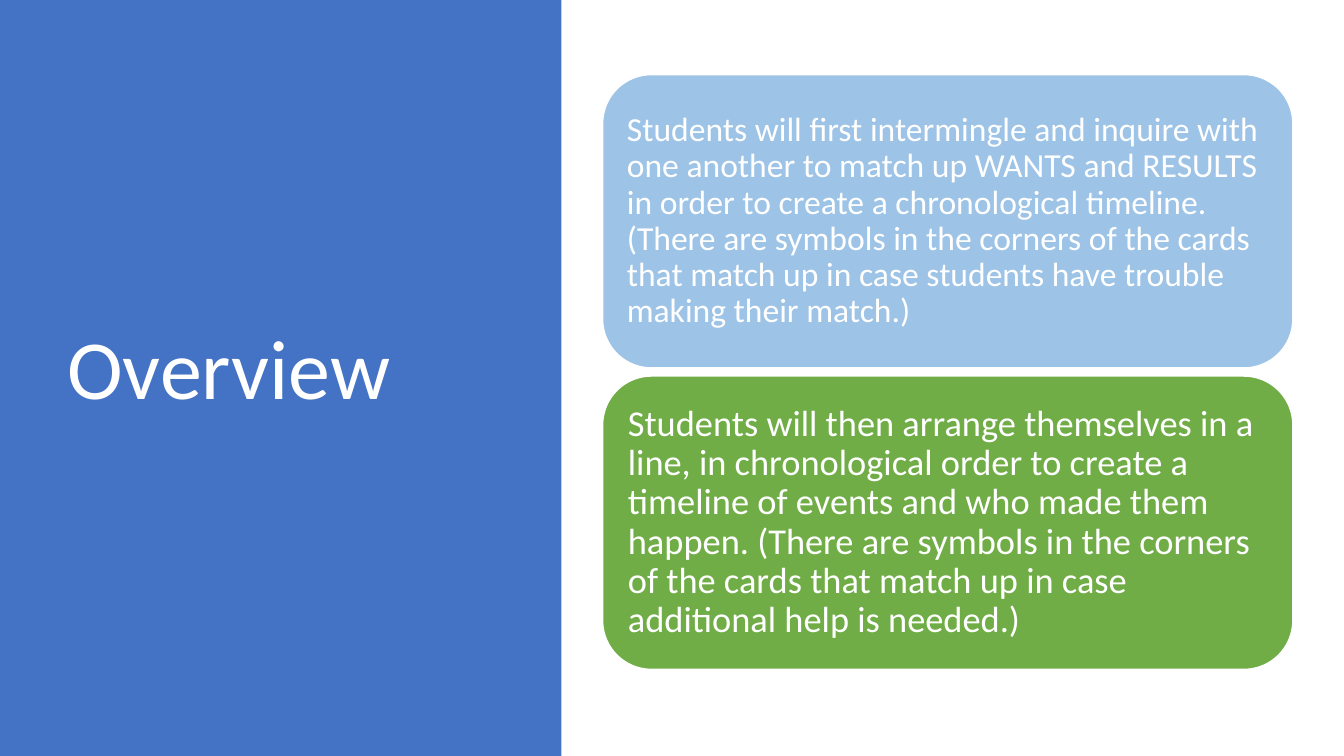
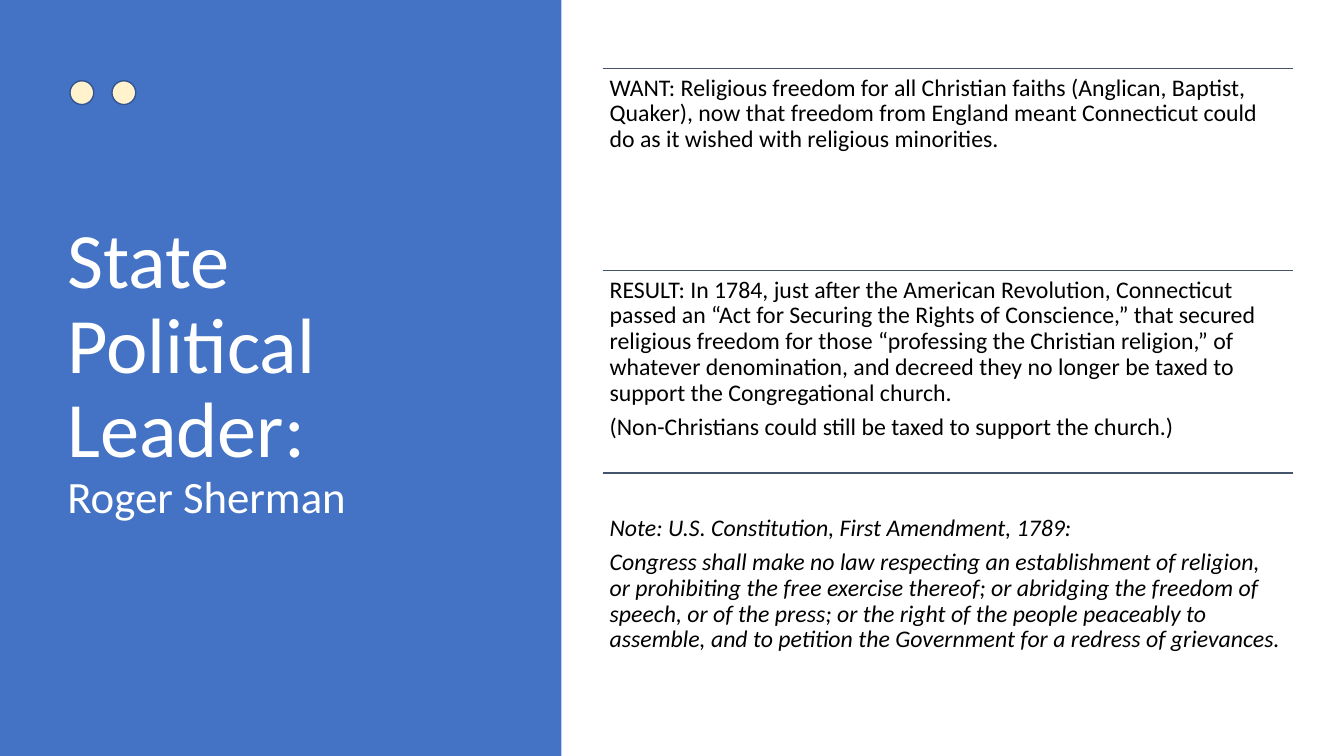
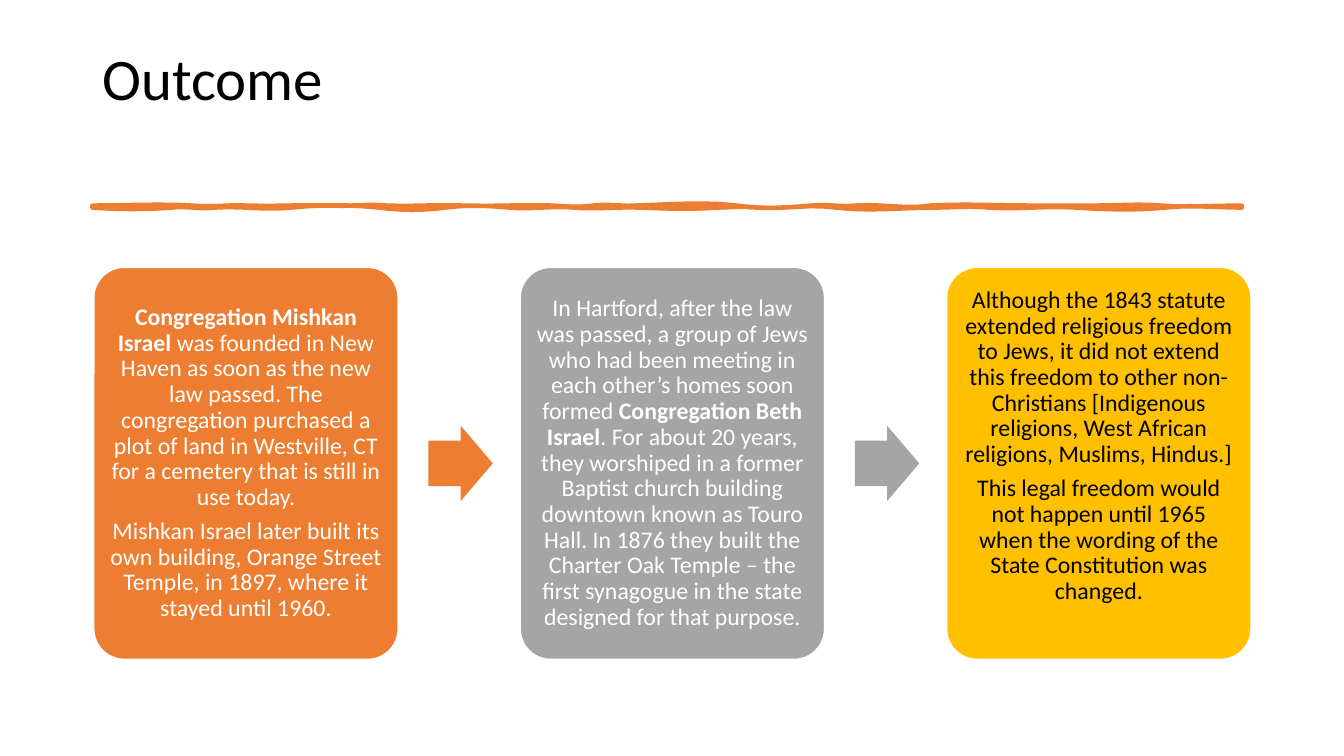
from lxml import etree
from pptx import Presentation
from pptx.dml.color import RGBColor
from pptx.enum.shapes import MSO_CONNECTOR, MSO_SHAPE
from pptx.enum.text import MSO_ANCHOR, PP_ALIGN
from pptx.oxml.ns import qn
from pptx.util import Pt

RECT, ROUND = MSO_SHAPE.RECTANGLE, MSO_SHAPE.ROUNDED_RECTANGLE
OVAL, ARROW = MSO_SHAPE.OVAL, MSO_SHAPE.RIGHT_ARROW
STRAIGHT = MSO_CONNECTOR.STRAIGHT
TOP, MIDDLE = MSO_ANCHOR.TOP, MSO_ANCHOR.MIDDLE
LEFT, CENTER = PP_ALIGN.LEFT, PP_ALIGN.CENTER

FONT = "Calibri"
WHITE, BLACK, BLUE, ORANGE = "FFFFFF", "000000", "4472C4", "ED7D31"
GRAY, GOLD, SLATE = "A5A5A5", "FFC000", "44546A"
rgb = RGBColor.from_string

# Shared layout, in points
PANEL_W = 401
COL_X, COL_W = 430.5, 493


def add_box(s, kind, x, y, w, h, fill, line=None):
    sp = s.shapes.add_shape(kind, Pt(x), Pt(y), Pt(w), Pt(h))
    sp.shadow.inherit = False
    sp.fill.solid()
    sp.fill.fore_color.rgb = rgb(fill)
    if line:
        sp.line.color.rgb = rgb(line)
        sp.line.width = Pt(1)
    else:
        sp.line.fill.background()
    return sp


def write(sp, paras, size, color, inset=(7.2, 3.6, 7.2, 3.6), anchor=MIDDLE,
          align=LEFT, italic=False):
    """Fill a shape with paragraphs; ** switches bold on and off."""
    tf = sp.text_frame
    tf.word_wrap = True
    tf.vertical_anchor = anchor
    tf.margin_left, tf.margin_top, tf.margin_right, tf.margin_bottom = map(Pt, inset)
    for i, text in enumerate(paras):
        p = tf.add_paragraph() if i else tf.paragraphs[0]
        p.alignment = align
        p.line_spacing = 0.9
        p.space_after = Pt(round(0.35 * size, 1))
        parts = text.split("**")
        p.text = parts[0]
        for n, part in enumerate(parts[1:]):
            r = p.add_run()
            r.text = part
            r.font.bold = n % 2 == 0
        for r in p.runs:
            r.font.name = FONT
            r.font.size = Pt(size)
            r.font.color.rgb = rgb(color)
            r.font.italic = italic


prs = Presentation()
prs.slide_width, prs.slide_height = Pt(960), Pt(540)
overview, leader, outcome = [prs.slides.add_slide(prs.slide_layouts[6]) for _ in range(3)]

# Blue title panel on the first two slides
panel_titles = []
for s, title, size in [(overview, "Overview", 60),
                       (leader, "State Political Leader:\vRoger Sherman", 56)]:
    add_box(s, RECT, 0, 0, PANEL_W, 540, BLUE)
    sp = s.shapes.add_textbox(Pt(41), Pt(49), Pt(299.5), Pt(433.5))
    write(sp, [title], size, WHITE)
    panel_titles.append(sp)
panel_titles[1].text_frame.paragraphs[0].runs[1].font.size = Pt(32)

# Overview: two stacked cards
steps = [
    ("9DC3E6", 24, 7.2,
     "Students will first intermingle and inquire with one another to match up WANTS and "
     "RESULTS in order to create a chronological timeline. (There are symbols in the corners "
     "of the cards that match up in case students have trouble making their match.)"),
    ("70AD47", 26, 7.8,
     "Students will then arrange themselves in a line, in chronological order to create a "
     "timeline of events and who made them happen. (There are symbols in the corners of the "
     "cards that match up in case additional help is needed.)"),
]
for i, (fill, size, pad, text) in enumerate(steps):
    sp = add_box(overview, ROUND, COL_X, 53.3 + i * 215.3, COL_W, 209.5, fill, WHITE)
    write(sp, [text], size, WHITE, inset=[pad] * 4)

# Leader: ruled sections with text below each rule
sections = [
    (5, False, [
        "WANT: Religious freedom for all Christian faiths (Anglican, Baptist, Quaker), now that "
        "freedom from England meant Connecticut could do as it wished with religious minorities."]),
    (5, False, [
        "RESULT: In 1784, just after the American Revolution, Connecticut passed an “Act for "
        "Securing the Rights of Conscience,” that secured religious freedom for those "
        "“professing the Christian religion,” of whatever denomination, and decreed they no "
        "longer be taxed to support the Congregational church.",
        "(Non-Christians could still be taxed to support the church.)"]),
    (31, True, [
        "Note: U.S. Constitution, First Amendment, 1789:",
        "Congress shall make no law respecting an establishment of religion, or prohibiting the "
        "free exercise thereof; or abridging the freedom of speech, or of the press; or the "
        "right of the people peaceably to assemble, and to petition the Government for a "
        "redress of grievances."]),
]
for i, (top, italic, paras) in enumerate(sections):
    y = 49 + i * 144.4
    rule = leader.shapes.add_connector(STRAIGHT, Pt(COL_X), Pt(y), Pt(COL_X + COL_W), Pt(y))
    rule.line.color.rgb = rgb(SLATE)
    rule.line.width = Pt(1)
    etree.SubElement(rule._element.spPr, qn("a:effectLst"))
    sp = leader.shapes.add_textbox(Pt(COL_X), Pt(y), Pt(COL_W), Pt(144.4))
    write(sp, paras, 17, BLACK, inset=(5, top, 5, 5), anchor=TOP, italic=italic)

# Leader: matching symbol of two dots
for i in range(2):
    add_box(leader, OVAL, 50 + i * 30, 57.7, 17, 17, "FFF2CC", "325491")

# Outcome: title
sp = outcome.shapes.add_textbox(Pt(66), Pt(29), Pt(828), Pt(58))
write(sp, ["Outcome"], 42, BLACK)

# Outcome: hand-drawn rule; each stretch is (end x, first bend, second bend)
upper = [(137, 0, -1.4), (176, 1.4, -0.7), (238, 0.7, -0.7), (276, 0.7, -1.4),
         (331, 0.7, -0.7), (395, 0.7, -0.7), (424, 0.7, 1.4), (454, -1.4, 0.7),
         (526, -0.7, -2.9), (580, 2.9, 1.4), (611, -1.4, 1.4), (665, -1.4, 2.9),
         (737, -1.4, 0), (783, 0, 0), (829, 0, -1.4), (887, 1.4, 0)]
lower = [(832, 0, -2.1), (769, 2.1, 1.4), (706, -1.4, 1.4), (668, -1.4, 0),
         (597, 0, 2.9), (542, -2.9, 1.4), (512, -1.4, 0), (457, 1.4, 0.7),
         (410, -0.7, 1.4), (364, -1.4, 1.4), (318, -1.4, -2.1), (271, 2.1, 2.1),
         (208, -2.1, -2.1), (153, 2.1, -1.4), (123, 1.4, -1.4), (66, 1.4, 1.4)]
points = []
x = 66
for edge_y, stretches in [(146.9, upper), (148.3, lower)]:
    points.append((Pt(x), Pt(edge_y)))
    for end, b1, b2 in stretches:
        for k in range(1, 7):
            t = k / 6
            bend = 3 * t * (1 - t) * ((1 - t) * b1 + t * b2)
            points.append((Pt(x + t * (end - x)), Pt(edge_y + bend)))
        x = end
fb = outcome.shapes.build_freeform(*points[0])
fb.add_line_segments(points[1:], close=True)
sp = fb.convert_to_shape()
sp.shadow.inherit = False
sp.fill.solid()
sp.fill.fore_color.rgb = rgb(ORANGE)
sp.line.color.rgb = rgb(ORANGE)
sp.line.width = Pt(3.25)

# Outcome: three cards joined by arrows
cards = [
    (ORANGE, WHITE, 5, [
        "**Congregation Mishkan Israel** was founded in New Haven as soon as the new law passed. "
        "The congregation purchased a plot of land in Westville, CT for a cemetery that is still "
        "in use today.",
        "Mishkan Israel later built its own building, Orange Street Temple, in 1897, where it "
        "stayed until 1960."]),
    (GRAY, WHITE, 5, [
        "In Hartford, after the law was passed, a group of Jews who had been meeting in each "
        "other’s homes soon formed **Congregation Beth Israel**. For about 20 years, they "
        "worshiped in a former Baptist church building downtown known as Touro Hall. In 1876 "
        "they built the Charter Oak Temple – the first synagogue in the state designed for "
        "that purpose."]),
    (GOLD, BLACK, 29.5, [
        "Although the 1843 statute extended religious freedom to Jews, it did not extend this "
        "freedom to other non-Christians [Indigenous religions, West African religions, "
        "Muslims, Hindus.]",
        "This legal freedom would not happen until 1965 when the wording of the State "
        "Constitution was changed."]),
]
for i, (fill, color, bottom, paras) in enumerate(cards):
    x = 67 + i * 304.6
    sp = add_box(outcome, ROUND, x, 191, 217.4, 280, fill, WHITE)
    sp.adjustments[0] = 0.1
    write(sp, paras, 17, color, inset=(5, 5, 5, bottom), align=CENTER)
    if i < len(cards) - 1:
        sp = add_box(outcome, ARROW, x + 239, 304, 46, 54, fill)
        sp.adjustments[0] = 0.6

prs.save("out.pptx")
